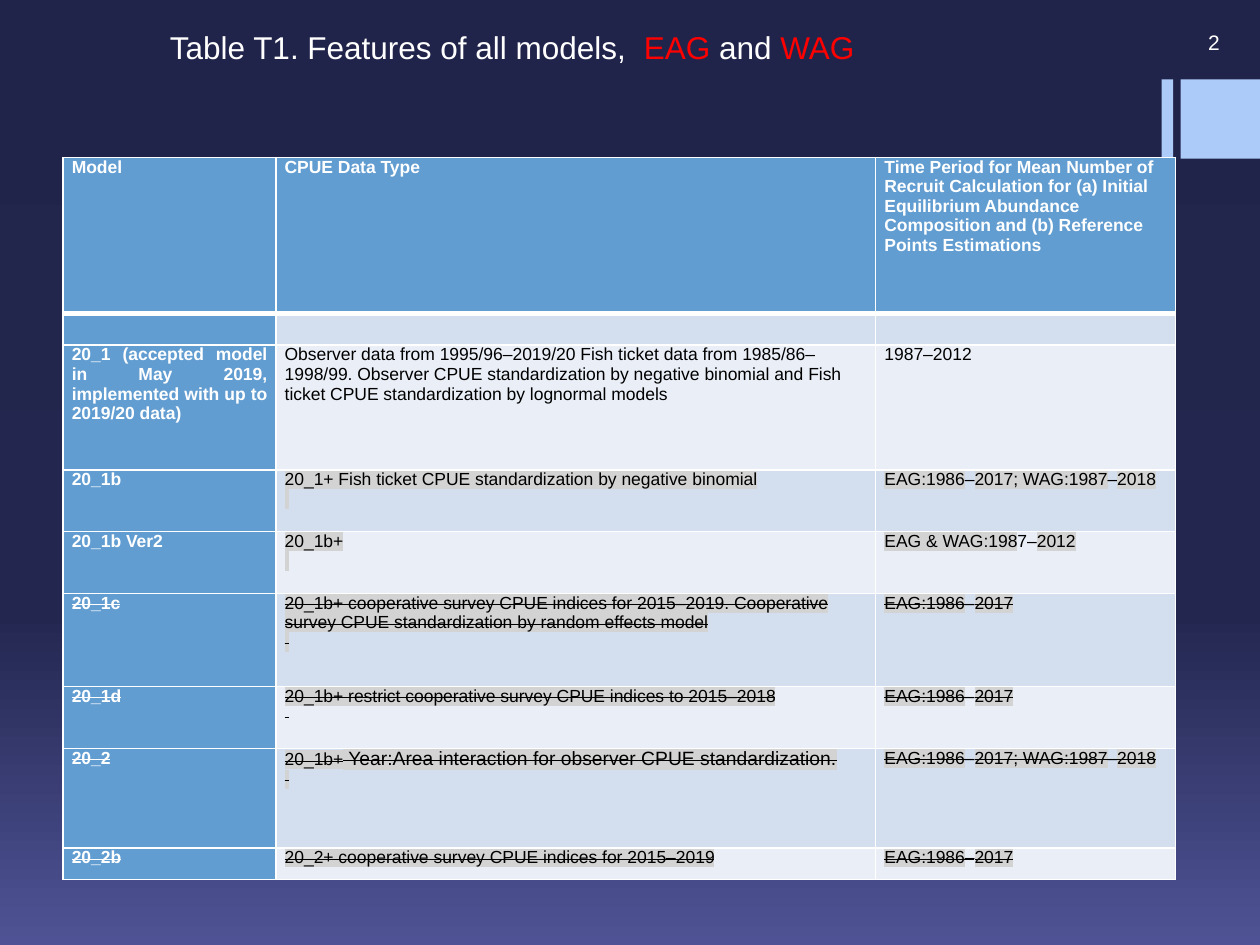
from copy import deepcopy
from dataclasses import dataclass

from lxml import etree
from pptx import Presentation
from pptx.dml.color import RGBColor
from pptx.enum.shapes import MSO_SHAPE
from pptx.enum.text import MSO_ANCHOR, PP_ALIGN
from pptx.oxml.ns import qn
from pptx.util import Inches, Pt

RECT = MSO_SHAPE.RECTANGLE
MIDDLE = MSO_ANCHOR.MIDDLE
LEFT, RIGHT, JUSTIFY = PP_ALIGN.LEFT, PP_ALIGN.RIGHT, PP_ALIGN.JUSTIFY
NBSP = chr(160)


@dataclass(frozen=True)
class Theme:
    font: str = "Arial"
    title: float = 18
    number: float = 12
    body: float = 10
    large: float = 11
    white: str = "FFFFFF"
    black: str = "000000"
    red: str = "FF0000"
    accent: str = "ACCBF9"
    header: str = "629DD1"
    bands: tuple = ("D3DFEE", "EAEFF7")
    mark: str = "D3D3D3"
    sky: tuple = ((0, "21244A"), (0.65, "232750"), (1, "4F5395"))


T = Theme()

COLUMNS = (1.69, 4.76, 2.38)
HEADINGS = (
    "Model",
    "CPUE Data Type",
    "Time Period for Mean Number of Recruit Calculation for (a) Initial Equilibrium "
    "Abundance Composition and (b) Reference Points Estimations",
)
HEADER_HEIGHT, SPACER_HEIGHT = 1.24, 0.25

# Text between bars alternates: highlighted, plain, highlighted...
# Text after ^ is set in the large size.
BOTH_AREAS = "EAG:1986|–|2017; WAG:1987|–|2018"
EAG_ONLY = "EAG:1986|–|2017"
# height, model, paragraphs of data type, time period, struck out
MODELS = (
    (0.99, "20_1 (accepted model in May 2019, implemented with up to 2019/20 data)",
     ["|Observer data from 1995/96–2019/20 Fish ticket data from 1985/86–1998/99. "
      "Observer CPUE standardization by negative binomial and Fish ticket CPUE "
      "standardization by lognormal models"], "|1987–2012", False),
    (0.49, "20_1b",
     ["20_1+ Fish ticket CPUE standardization by negative binomial", NBSP],
     BOTH_AREAS, False),
    (0.49, "20_1b Ver2", ["20_1b+", NBSP], "EAG & WAG:198|7–|2012", False),
    (0.74, "20_1c",
     ["20_1b+ cooperative survey CPUE indices for 2015–2019. Cooperative survey CPUE "
      "standardization by random effects model", NBSP], EAG_ONLY, True),
    (0.49, "20_1d",
     ["20_1b+ restrict cooperative survey CPUE indices to 2015–2018", "|" + NBSP],
     EAG_ONLY, True),
    (0.79, "20_2",
     ["20_1b+^ Year:Area interaction for observer CPUE standardization.", NBSP],
     BOTH_AREAS, True),
    (0.25, "20_2b", ["20_2+ cooperative survey CPUE indices for 2015–2019"],
     EAG_ONLY, True),
)


def rgb(color):
    return RGBColor.from_string(color)


def style(font, size, color, bold=False):
    font.name, font.size, font.bold = T.font, Pt(size), bold
    font.color.rgb = rgb(color)


def set_background(s):
    fill = s.background.fill
    fill.gradient()
    fill.gradient_angle = 270
    stops = s.background._cSld.find(".//" + qn("a:gsLst"))
    stops.insert(1, deepcopy(stops[0]))
    for stop, (position, color) in zip(fill.gradient_stops, T.sky):
        stop.position = position
        stop.color.rgb = rgb(color)


def add_accent(s, left, width):
    sp = s.shapes.add_shape(RECT, Inches(left), Inches(0.63), Inches(width), Inches(0.63))
    sp.shadow.inherit = False
    sp.fill.solid()
    sp.fill.fore_color.rgb = rgb(T.accent)
    sp.line.fill.background()


def add_text(s, box, runs, size, align=LEFT):
    """Add one line of text from (text, color) runs."""
    tf = s.shapes.add_textbox(*map(Inches, box)).text_frame
    tf.word_wrap = True
    p = tf.paragraphs[0]
    p.alignment = align
    for text, color in runs:
        r = p.add_run()
        r.text = text
        style(r.font, size, color)
    return tf


def highlight(r):
    """Highlight a run that has no colour or typeface of its own."""
    mark = etree.SubElement(r._r.get_or_add_rPr(), qn("a:highlight"))
    etree.SubElement(mark, qn("a:srgbClr"), val=T.mark)


def add_cell_run(p, text, marked, struck, size=None):
    r = p.add_run()
    r.text = text
    if size:
        r.font.size = Pt(size)
    if struck:
        r._r.get_or_add_rPr().set("strike", "sngStrike")
    if marked:
        highlight(r)


def fill_cell(cell, paragraphs, fill, color=T.black, bold=False, align=LEFT, struck=False):
    cell.margin_left = cell.margin_right = Inches(0.07)
    cell.margin_top = cell.margin_bottom = 0
    cell.fill.solid()
    cell.fill.fore_color.rgb = rgb(fill)
    tf = cell.text_frame
    for i, text in enumerate(paragraphs):
        p = tf.add_paragraph() if i else tf.paragraphs[0]
        p.alignment = align
        style(p.font, T.body, color, bold)
        for j, part in enumerate(text.split("|")):
            normal, _, large = part.partition("^")
            for piece, size in ((normal, None), (large, T.large)):
                if piece:
                    add_cell_run(p, piece, j % 2 == 0, struck, size)
    if not paragraphs:
        end = etree.SubElement(tf.paragraphs[0]._p, qn("a:endParaRPr"))
        end.set("sz", str(T.body * 100))


def set_borders(cell, top=1, bottom=1):
    tcPr = cell._tc.get_or_add_tcPr()
    for i, (side, width) in enumerate((("L", 1), ("R", 1), ("T", top), ("B", bottom))):
        ln = etree.Element(qn("a:ln" + side), w=str(Pt(width)))
        fill = etree.SubElement(ln, qn("a:solidFill"))
        etree.SubElement(fill, qn("a:srgbClr"), val=T.white)
        tcPr.insert(i, ln)


def add_model_table(s):
    heights = [HEADER_HEIGHT, SPACER_HEIGHT] + [model[0] for model in MODELS]
    frame = s.shapes.add_table(len(heights), len(COLUMNS), Inches(0.5), Inches(1.25),
                               Inches(sum(COLUMNS)), Inches(sum(heights)))
    table = frame.table
    for column, width in zip(table.columns, COLUMNS):
        column.width = Inches(width)
    for row, height in zip(table.rows, heights):
        row.height = Inches(height)

    for c, heading in enumerate(HEADINGS):
        fill_cell(table.cell(0, c), ["|" + heading], T.header, T.white, True)
        fill_cell(table.cell(1, c), [], T.bands[0] if c else T.header)
    for i, (_, model, data, period, struck) in enumerate(MODELS, start=2):
        band = T.bands[(i - 1) % 2]
        fill_cell(table.cell(i, 0), ["|" + model], T.header, T.white, True, JUSTIFY, struck)
        fill_cell(table.cell(i, 1), data, band, struck=struck)
        fill_cell(table.cell(i, 2), [period], band, struck=struck)

    for i, row in enumerate(table.rows):
        for cell in row.cells:
            set_borders(cell, top=3 if i == 1 else 1, bottom=3 if i == 0 else 1)


def main():
    prs = Presentation()
    prs.slide_width, prs.slide_height = Inches(10), Inches(7.5)
    s = prs.slides.add_slide(prs.slide_layouts[6])
    set_background(s)
    add_accent(s, 9.22, 0.09)
    add_accent(s, 9.37, 0.63)
    number = add_text(s, (8.75, 0.17, 1.03, 0.33), [("2", T.white)], T.number, RIGHT)
    number.vertical_anchor = MIDDLE
    add_text(s, (1.25, 0.17, 6.75, 0.4),
             [("Table T1. Features of all models,  ", T.white), ("EAG", T.red),
              (" and ", T.white), ("WAG", T.red)], T.title)
    add_model_table(s)
    prs.save("out.pptx")


if __name__ == "__main__":
    main()
